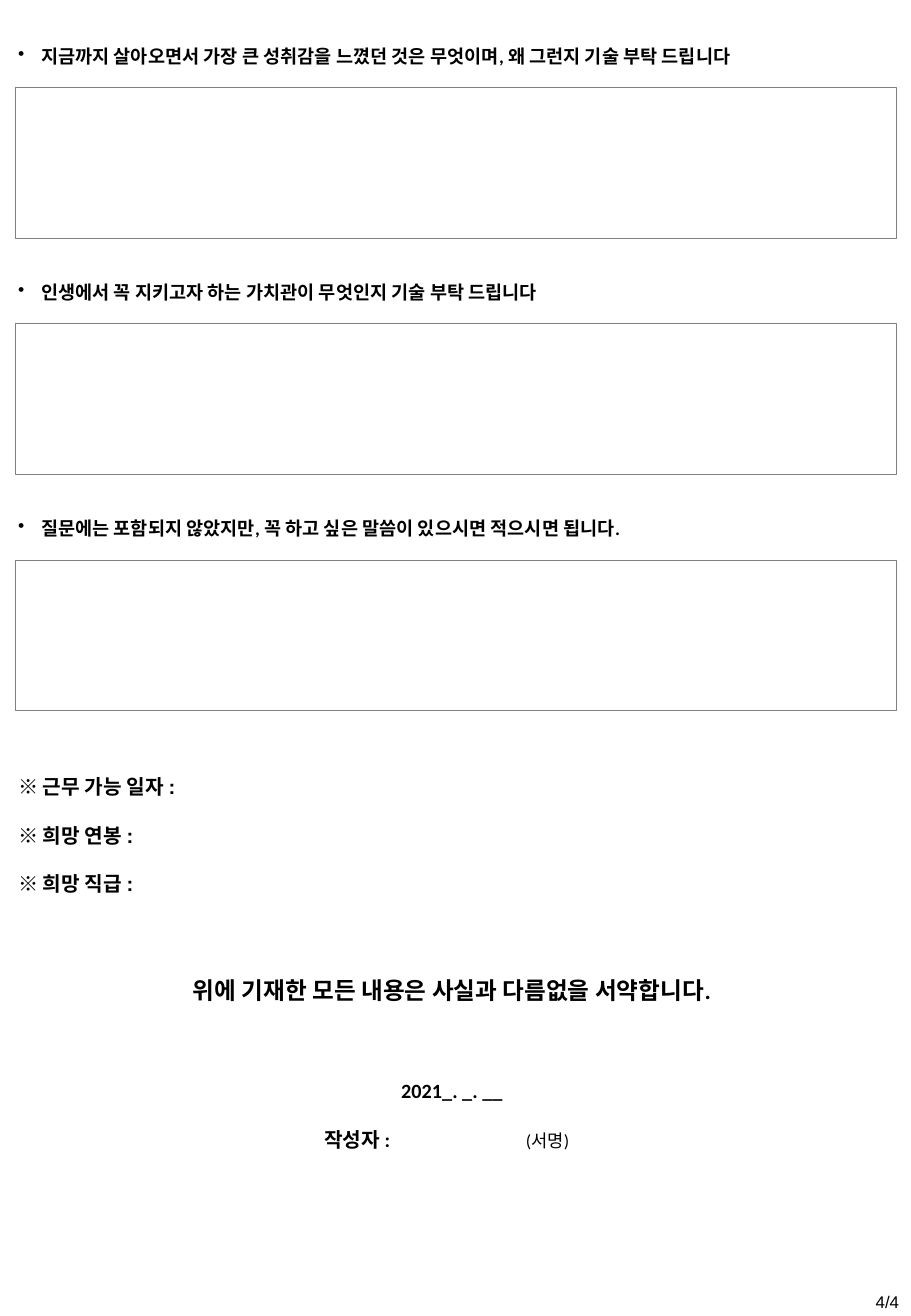
from dataclasses import dataclass

from lxml import etree
from pptx import Presentation
from pptx import util as u
from pptx.dml import color
from pptx.enum import shapes, text
from pptx.oxml import ns


@dataclass(frozen=True)
class Theme:
    """Colours, fonts and type sizes of the form."""
    ink: color.RGBColor = color.RGBColor(0, 0, 0)
    frame: color.RGBColor = color.RGBColor(0x80, 0x80, 0x80)
    body_font: str = "Calibri"
    label_font: str = "Arial"
    page_size: float = 10
    note_size: float = 10.5
    question_size: float = 11
    label_size: float = 12
    pledge_size: float = 14
    line: float = 15


THEME = Theme()
QUESTIONS = (
    "지금까지 살아오면서 가장 큰 성취감을 느꼈던 것은 무엇이며, 왜 그런지 기술 부탁 드립니다",
    "인생에서 꼭 지키고자 하는 가치관이 무엇인지 기술 부탁 드립니다",
    "질문에는 포함되지 않았지만, 꼭 하고 싶은 말씀이 있으시면 적으시면 됩니다.",
)
CONDITIONS = ("※ 근무 가능 일자 :", "※ 희망 연봉 :", "※ 희망 직급 :")


def style(font, size, name, bold=True):
    """Apply a type style to a font."""
    font.size, font.name, font.bold = u.Pt(size), name, bold
    font.color.rgb = THEME.ink


def add_text_frame(page, left, top, width, height):
    """Add a wrapping text box and return its text frame."""
    frame = page.shapes.add_textbox(left, top, width, height).text_frame
    frame.word_wrap = True
    return frame


def add_bullet(para, indent):
    """Give a paragraph a hanging round bullet."""
    properties = para._p.get_or_add_pPr()
    properties.set("marL", str(indent))
    properties.set("indent", str(-indent))
    etree.SubElement(properties, ns.qn("a:buChar"), char="•")


def add_tabs(para, positions):
    """Set left tab stops on a paragraph."""
    stops = etree.SubElement(para._p.get_or_add_pPr(), ns.qn("a:tabLst"))
    for position in positions:
        etree.SubElement(stops, ns.qn("a:tab"), pos=str(position), algn="l")


def add_question(page, left, top, width, question):
    """Place a bulleted question above its empty answer box."""
    para = add_text_frame(page, left, top, width, u.Cm(0.74)).paragraphs[0]
    add_bullet(para, u.Cm(0.48))
    para.text = question
    style(para.font, THEME.question_size, THEME.body_font)
    answer = page.shapes.add_shape(
        shapes.MSO_SHAPE.RECTANGLE,
        left + u.Cm(0.2), top + u.Cm(1.02), width - u.Cm(0.22), u.Cm(3.15))
    answer.shadow.inherit = False
    answer.fill.background()
    answer.line.color.rgb = THEME.frame
    answer.line.width = u.Pt(0.75)


def add_declaration(page, left, top, width, height):
    """Place the working conditions, the pledge, the date and the signature line."""
    frame = add_text_frame(page, left, top, width, height)
    center, start = text.PP_ALIGN.CENTER, text.PP_ALIGN.LEFT
    rows = [(label, start, 13.7, THEME.label_size, THEME.label_font) for label in CONDITIONS]
    rows += [
        ("위에 기재한 모든 내용은 사실과 다름없을 서약합니다.", center, 49,
         THEME.pledge_size, THEME.body_font),
        ("2021_. _. __", center, 43.7, THEME.label_size, THEME.body_font),
    ]
    for index, (words, align, gap, size, name) in enumerate(rows):
        para = frame.add_paragraph() if index else frame.paragraphs[0]
        para.text, para.alignment = words, align
        para.line_spacing = u.Pt(THEME.line)
        if index:
            para.space_before = u.Pt(gap)
        style(para.font, size, name)

    signature = frame.add_paragraph()
    add_tabs(signature, (u.Cm(6.4), u.Cm(10.62)))
    signature.line_spacing, signature.space_before = u.Pt(THEME.line), u.Pt(13.7)
    for words, size, bold in (("\t작성자 :\t", THEME.label_size, True),
                              ("(서명)", THEME.note_size, False)):
        span = signature.add_run()
        span.text = words
        style(span.font, size, THEME.body_font, bold)


def add_page_number(page, left, top, width, height):
    """Place the page count at the right edge."""
    para = add_text_frame(page, left, top, width, height).paragraphs[0]
    para.text, para.alignment = "4/4", text.PP_ALIGN.RIGHT
    style(para.font, THEME.page_size, THEME.label_font, bold=False)


def main():
    """Build the last page of the application form."""
    deck = Presentation()
    deck.slide_width, deck.slide_height = u.Cm(19.05), u.Cm(27.51)
    page = deck.slides.add_slide(deck.slide_layouts[6])
    left, width = u.Cm(0.13), u.Cm(18.64)
    for index, question in enumerate(QUESTIONS):
        add_question(page, left, u.Cm(0.81 + 4.94 * index), width, question)
    add_declaration(page, left, u.Cm(16.05), width, u.Cm(8.2))
    add_page_number(page, u.Cm(16.66), u.Cm(26.87), u.Cm(2.39), u.Cm(0.64))
    deck.save("out.pptx")


if __name__ == "__main__":
    main()
